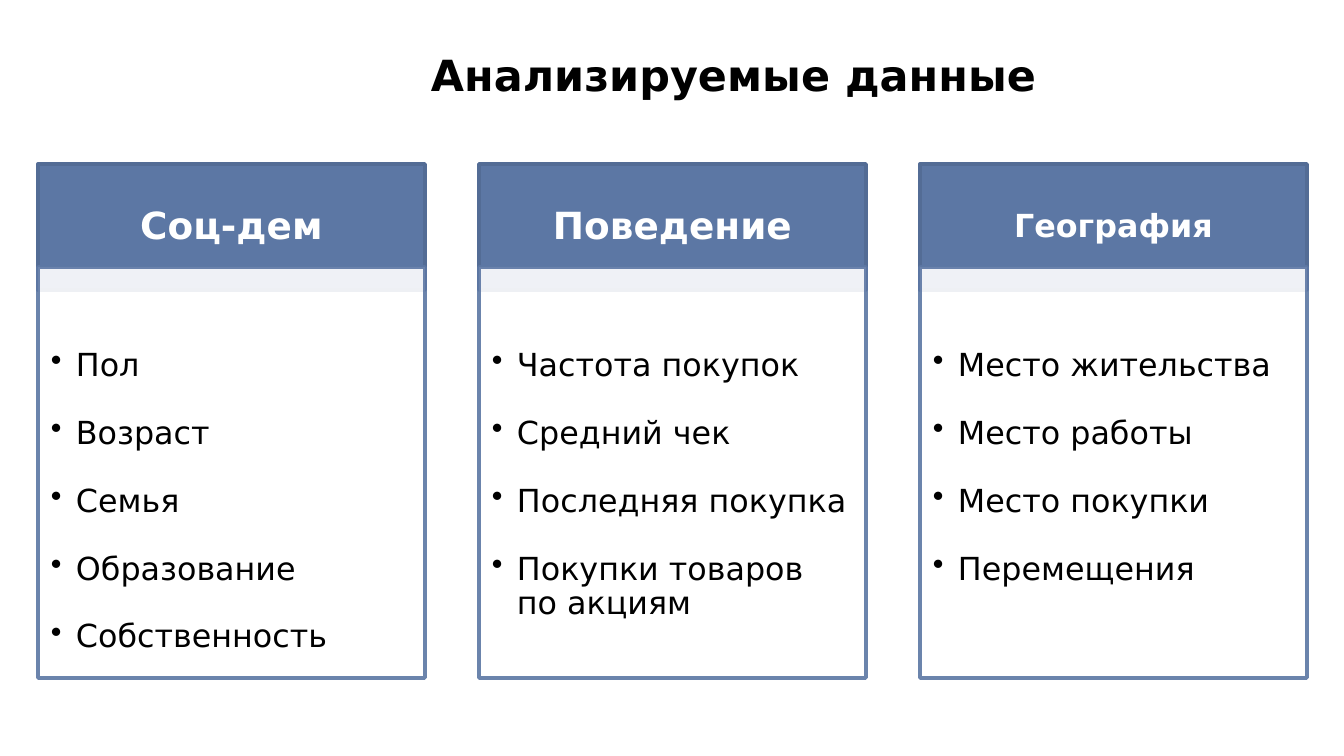
from dataclasses import dataclass

from lxml.etree import SubElement
from pptx import Presentation
from pptx.dml.color import RGBColor
from pptx.enum.shapes import MSO_SHAPE as Preset
from pptx.enum.text import MSO_ANCHOR as Anchor, PP_ALIGN as Align
from pptx.oxml.ns import qn
from pptx.shapes.autoshape import Shape
from pptx.slide import Slide
from pptx.text.text import TextFrame, _Paragraph as Paragraph
from pptx.util import Pt

EMU_PER_PX = 914400 / 134.4
FONT = "DejaVu Sans"
COLORS = {
    "black": "000000",
    "white": "FFFFFF",
    "blue": "5C77A4",
    "edge": "536C95",
}

# Column grid, in px
LEFT, PITCH, WIDTH = 38, 441, 387
HEADER_TOP, HEADER_HEIGHT = 164, 126
BODY_TOP, BODY_HEIGHT = 267, 411
BULLET_INDENT = 25


@dataclass(frozen=True)
class Column:
    heading: str
    items: tuple[str, ...]
    heading_size: float = 20


COLUMNS = (
    Column("Соц-дем", ("Пол", "Возраст", "Семья", "Образование", "Собственность")),
    Column("Поведение", ("Частота покупок", "Средний чек", "Последняя покупка",
                         "Покупки товаров по акциям")),
    Column("География", ("Место жительства", "Место работы", "Место покупки",
                         "Перемещения"), 17),
)


def px(length: int) -> int:
    return round(length * EMU_PER_PX)


def color(name: str) -> RGBColor:
    return RGBColor.from_string(COLORS[name])


def set_frame(frame: TextFrame, insets: tuple[int, int, int, int], anchor: Anchor) -> None:
    frame.word_wrap = True
    frame.vertical_anchor = anchor
    (frame.margin_left, frame.margin_top,
     frame.margin_right, frame.margin_bottom) = map(px, insets)


def format_paragraph(paragraph: Paragraph, size: float, color_name: str,
                     bold: bool = False) -> None:
    for run in paragraph.runs:
        run.font.name = FONT
        run.font.size = Pt(size)
        run.font.bold = bold
        run.font.color.rgb = color(color_name)


def space_paragraph(paragraph: Paragraph, align: Align) -> None:
    paragraph.alignment = align
    paragraph.line_spacing = 0.9
    paragraph.space_after = Pt(18)


def add_bullet(paragraph: Paragraph) -> None:
    properties = paragraph._p.get_or_add_pPr()
    properties.set("marL", str(px(BULLET_INDENT)))
    properties.set("indent", str(-px(BULLET_INDENT)))
    SubElement(properties, qn("a:buChar"), char="•")


def add_panel(slide: Slide, left: int, top: int, height: int,
              fill: str, line: str) -> Shape:
    shape = slide.shapes.add_shape(Preset.RECTANGLE, px(left), px(top), px(WIDTH), px(height))
    shape.shadow.inherit = False
    shape.fill.solid()
    shape.fill.fore_color.rgb = color(fill)
    shape.line.color.rgb = color(line)
    shape.line.width = Pt(2)
    return shape


def make_translucent(shape: Shape, percent: int) -> None:
    for shade in shape._element.spPr.iter(qn("a:srgbClr")):
        SubElement(shade, qn("a:alpha"), val=str(percent * 1000))


def draw_column(slide: Slide, column: Column, left: int) -> None:
    # Heading
    header = add_panel(slide, left, HEADER_TOP, HEADER_HEIGHT, "blue", "edge")
    set_frame(header.text_frame, (21, 12, 21, 12), Anchor.MIDDLE)
    header.text_frame.text = column.heading
    paragraph = header.text_frame.paragraphs[0]
    space_paragraph(paragraph, Align.CENTER)
    format_paragraph(paragraph, column.heading_size, "white", bold=True)

    # Bulleted list
    body = add_panel(slide, left, BODY_TOP, BODY_HEIGHT, "white", "blue")
    make_translucent(body, 90)
    set_frame(body.text_frame, (13, 82, 17, 20), Anchor.TOP)
    body.text_frame.text = "\n".join(column.items)
    for paragraph in body.text_frame.paragraphs:
        space_paragraph(paragraph, Align.LEFT)
        add_bullet(paragraph)
        format_paragraph(paragraph, 17, "black")


def draw_title(slide: Slide, text: str) -> None:
    title = slide.shapes.add_textbox(px(418), px(39), px(892), px(71))
    set_frame(title.text_frame, (13, 7, 13, 7), Anchor.MIDDLE)
    title.text_frame.text = text
    format_paragraph(title.text_frame.paragraphs[0], 23, "black", bold=True)


def main() -> None:
    presentation = Presentation()
    presentation.slide_width, presentation.slide_height = px(1344), px(756)
    slide = presentation.slides.add_slide(presentation.slide_layouts[6])
    for index, column in enumerate(COLUMNS):
        draw_column(slide, column, LEFT + index * PITCH)
    draw_title(slide, "Анализируемые данные")
    presentation.save("out.pptx")


if __name__ == "__main__":
    main()
